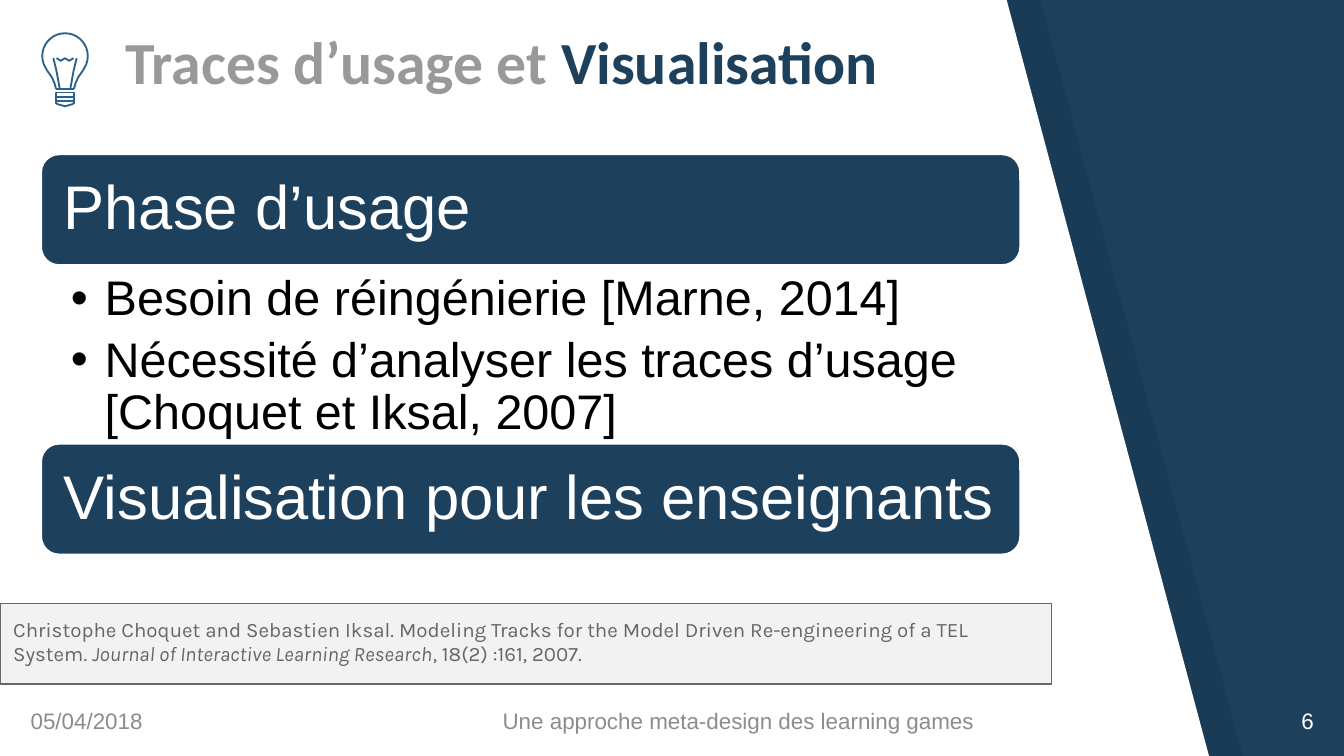
import math

from lxml import etree
from pptx import Presentation
from pptx import util as u
from pptx.dml.color import RGBColor
from pptx.enum import shapes, text
from pptx.oxml.ns import qn

Cm, Pt = u.Cm, u.Pt
COLORS = {
    "navy": "1D405D", "white": "FFFFFF", "black": "000000", "title": "999999",
    "footer": "8C8C8C", "note": "666666", "note_fill": "F2F2F2", "bulb": "2B618B",
}
LEFT, RIGHT = text.PP_ALIGN.LEFT, text.PP_ALIGN.RIGHT
TOP, MIDDLE, BOTTOM = (text.MSO_ANCHOR.TOP, text.MSO_ANCHOR.MIDDLE,
                       text.MSO_ANCHOR.BOTTOM)


def rgb(name):
    return RGBColor.from_string(COLORS[name])


def paint(sp, fill=None, line=None, width=1):
    sp.shadow.inherit = False
    if fill:
        sp.fill.solid()
        sp.fill.fore_color.rgb = rgb(fill)
    else:
        sp.fill.background()
    if line:
        sp.line.color.rgb = rgb(line)
        sp.line.width = Pt(width)
    else:
        sp.line.fill.background()


def set_frame(sp, anchor, insets):
    """Insets are left, top, right, bottom in centimetres."""
    tf = sp.text_frame
    tf.word_wrap = True
    tf.auto_size = text.MSO_AUTO_SIZE.NONE
    tf.vertical_anchor = anchor
    tf.margin_left, tf.margin_top, tf.margin_right, tf.margin_bottom = map(Cm, insets)
    return tf


def add_run(p, content, size, color, font="Arial", bold=None, italic=None):
    r = p.add_run()
    r.text = content
    r.font.size, r.font.name = Pt(size), font
    r.font.bold, r.font.italic = bold, italic
    r.font.color.rgb = rgb(color)


def add_outline(s, points, closed=True, **style):
    (x, y), *rest = [(Cm(px), Cm(py)) for px, py in points]
    builder = s.shapes.build_freeform(x, y)
    builder.add_line_segments(rest, close=closed)
    sp = builder.convert_to_shape()
    paint(sp, **style)
    return sp


def add_panels(s):
    """White slanted panel over its translucent shadow."""
    for dx, fill in ((0.64, "black"), (0, "white")):
        corners = [(0, -0.02), (0, 14.33), (22.86, 14.33), (19.02, -0.02)]
        sp = add_outline(s, [(x + dx, y) for x, y in corners], fill=fill)
        if dx:
            color = sp.fill._xPr.find(qn("a:solidFill"))[0]
            etree.SubElement(color, qn("a:alpha")).set("val", "7000")


def add_title(s):
    sp = s.shapes.title
    sp.left, sp.top, sp.width, sp.height = Cm(2.12), Cm(0.72), Cm(15.6), Cm(1.35)
    p = set_frame(sp, BOTTOM, [0.25] * 4).paragraphs[0]
    p.alignment = LEFT
    add_run(p, "Traces d’usage et ", 32, "title", "Calibri", bold=True)
    add_run(p, "Visualisation", 32, "navy", "Calibri", bold=True)


def add_banner(s, top, label):
    sp = s.shapes.add_shape(shapes.MSO_SHAPE.ROUNDED_RECTANGLE,
                            Cm(0.76), Cm(top), Cm(18.54), Cm(2.13))
    paint(sp, "navy", "white", 2)
    # The rounded corners already push the text in by about 0.1 cm.
    p = set_frame(sp, MIDDLE, (0.34, 0, 0.1, 0)).paragraphs[0]
    p.alignment, p.line_spacing = LEFT, 0.9
    add_run(p, label, 33, "white")


def add_bullets(s, items):
    sp = s.shapes.add_textbox(Cm(0.76), Cm(5.05), Cm(18.54), Cm(3.33))
    tf = set_frame(sp, TOP, (0.58, 0.13, 0.66, 0.13))
    for i, item in enumerate(items):
        p = tf.add_paragraph() if i else tf.paragraphs[0]
        p.line_spacing, p.space_after = 0.9, Pt(5)
        add_run(p, item, 26, "black")
        pPr = p._p.get_or_add_pPr()
        pPr.set("marL", str(Cm(0.64)))
        pPr.set("indent", str(-Cm(0.64)))
        etree.SubElement(pPr, qn("a:buFont")).set("typeface", "Arial")
        etree.SubElement(pPr, qn("a:buChar")).set("char", "•")


def add_reference(s):
    sp = s.shapes.add_shape(shapes.MSO_SHAPE.RECTANGLE,
                            0, Cm(11.41), Cm(19.87), Cm(1.52))
    paint(sp, "note_fill", "note", 0.75)
    p = set_frame(sp, TOP, [0.25] * 4).paragraphs[0]
    p.alignment = LEFT
    for content, italic in (
        ("Christophe Choquet and Sebastien Iksal. Modeling Tracks for the "
         "Model Driven Re-engineering of a TEL System. ", False),
        ("Journal of Interactive Learning Research", True),
        (", 18(2) :161, 2007.", False),
    ):
        add_run(p, content, 11, "note", "Karla", italic=italic)


def add_footer(s, left, width, content, color="footer", align=LEFT):
    sp = s.shapes.add_textbox(Cm(left), Cm(13.24), Cm(width), Cm(0.76))
    p = set_frame(sp, MIDDLE, (0.25, 0.13, 0.25, 0.13)).paragraphs[0]
    p.alignment = align
    add_run(p, content, 12, color)


def add_bulb(s):
    cx, cy, radius, half = 1.23, 1.06, 0.43, 0.17

    def mirror(points):
        return [(2 * cx - x, y) for x, y in points]

    neck = [(cx + half, 1.68), (1.43, 1.57), (1.48, 1.46), (1.57, 1.33), (1.63, 1.22)]
    dome = [(cx + radius * math.cos(math.radians(a)),
             cy - radius * math.sin(math.radians(a))) for a in range(-10, 191, 10)]
    stem = [(1.45, 1.1), (1.39, 1.35), (1.33, 1.68)]
    filament = [(1.07, 1.1), (1.15, 1.15), (cx, 1.1), (1.31, 1.15), (1.39, 1.1)]
    base = [(cx + half, 1.91), (cx + half, 1.95), (1.37, 1.97), (cx, 2.01)]
    bars = [[(cx - half, y), (cx + half, y), (cx + half, y + 0.08), (cx - half, y + 0.08)]
            for y in (1.75, 1.83)]

    for points in bars + [base + mirror(base)[::-1]]:
        add_outline(s, points, line="bulb")
    for points in (neck + dome + mirror(neck)[::-1], stem, mirror(stem), filament,
                   [(cx - half, 1.68), (cx + half, 1.68)]):
        add_outline(s, points, closed=False, line="bulb")


def main():
    prs = Presentation()
    prs.slide_width, prs.slide_height = Cm(25.4), Cm(14.29)
    s = prs.slides.add_slide(prs.slide_layouts[5])
    s.background.fill.solid()
    s.background.fill.fore_color.rgb = rgb("navy")

    add_panels(s)
    # The title placeholder comes first; bring it in front of the panels.
    s.shapes._spTree.append(s.shapes.title._element)
    add_title(s)
    add_footer(s, 0.33, 6.76, "05/04/2018")
    add_footer(s, 9.25, 12.88, "Une approche meta-design des learning games")
    add_footer(s, 23.6, 1.48, "6", "white", RIGHT)
    add_banner(s, 2.9, "Phase d’usage")
    add_bullets(s, ["Besoin de réingénierie [Marne, 2014]",
                    "Nécessité d’analyser les traces d’usage [Choquet et Iksal, 2007]"])
    add_banner(s, 8.37, "Visualisation pour les enseignants")
    add_reference(s)
    add_bulb(s)
    prs.save("out.pptx")


if __name__ == "__main__":
    main()
